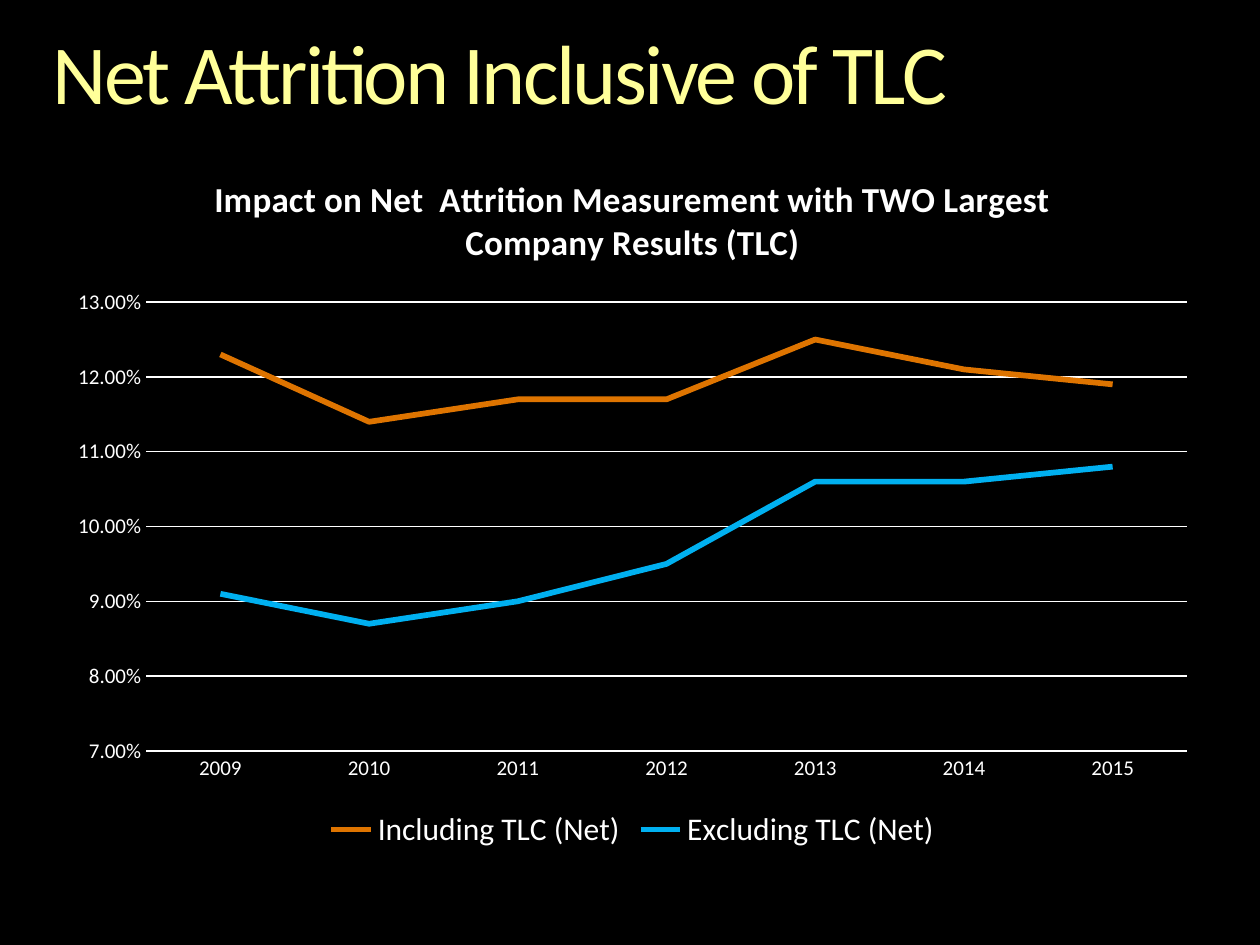
"""Build the net attrition slide with its two-series line chart."""
from dataclasses import dataclass

import pptx
import pptx.chart.data
import pptx.dml.color
import pptx.enum.chart
import pptx.enum.text
import pptx.util

Pt = pptx.util.Pt
FONT = "Calibri"
WHITE = "FFFFFF"


@dataclass
class AttritionSeries:
    name: str
    color: str
    rates: tuple[float, ...]


YEARS = [str(year) for year in range(2009, 2016)]
ATTRITION = [
    AttritionSeries("Including TLC (Net)", "DE7400",
                    (0.123, 0.114, 0.117, 0.117, 0.125, 0.121, 0.119)),
    AttritionSeries("Excluding TLC (Net)", "00B0F0",
                    (0.091, 0.087, 0.09, 0.095, 0.106, 0.106, 0.108)),
]


def rgb(color: str) -> pptx.dml.color.RGBColor:
    return pptx.dml.color.RGBColor.from_string(color)


def style_font(font, size: float, color: str = WHITE, bold: bool = False) -> None:
    font.name = FONT
    font.size = Pt(size)
    font.bold = bold
    font.color.rgb = rgb(color)


def style_line(line, color: str, width: float) -> None:
    line.color.rgb = rgb(color)
    line.width = Pt(width)


def add_heading(slide) -> None:
    heading = slide.shapes.title
    heading.left, heading.top, heading.width, heading.height = Pt(30), Pt(18), Pt(660), Pt(52.5)
    frame = heading.text_frame
    frame.text = "Net Attrition Inclusive of TLC"
    frame.margin_left = frame.margin_right = frame.margin_top = frame.margin_bottom = 0
    frame.word_wrap = True
    frame.vertical_anchor = pptx.enum.text.MSO_ANCHOR.TOP
    frame.auto_size = pptx.enum.text.MSO_AUTO_SIZE.SHAPE_TO_FIT_TEXT
    paragraph = frame.paragraphs[0]
    paragraph.alignment = pptx.enum.text.PP_ALIGN.LEFT
    paragraph.line_spacing = 0.9
    run = paragraph.runs[0]
    style_font(run.font, 48, "FFFF99")
    run._r.get_or_add_rPr().set("spc", "-150")


def style_axes(chart) -> None:
    for axis in (chart.category_axis, chart.value_axis):
        axis.major_tick_mark = axis.minor_tick_mark = pptx.enum.chart.XL_TICK_MARK.NONE
        style_font(axis.tick_labels.font, 12)
    style_line(chart.category_axis.format.line, WHITE, 0.75)
    rate_axis = chart.value_axis
    rate_axis.minimum_scale, rate_axis.maximum_scale, rate_axis.major_unit = 0.07, 0.13, 0.01
    rate_axis.tick_labels.number_format = "0.00%"
    rate_axis.tick_labels.number_format_is_linked = False
    rate_axis.format.line.fill.background()
    style_line(rate_axis.major_gridlines.format.line, WHITE, 0.75)


def add_attrition_chart(slide) -> None:
    rates = pptx.chart.data.CategoryChartData(number_format="0.00%")
    rates.categories = YEARS
    for series in ATTRITION:
        rates.add_series(series.name, series.rates)
    chart = slide.shapes.add_chart(pptx.enum.chart.XL_CHART_TYPE.LINE,
                                   Pt(31.5), Pt(84), Pt(660), Pt(404.6), rates).chart
    style_font(chart.font, 10)
    chart.has_title = True
    caption = chart.chart_title.text_frame
    caption.text = "Impact on Net  Attrition Measurement with TWO Largest Company Results (TLC)"
    style_font(caption.paragraphs[0].runs[0].font, 20, bold=True)
    chart.chart_title.include_in_layout = False
    style_axes(chart)
    chart.has_legend = True
    chart.legend.position = pptx.enum.chart.XL_LEGEND_POSITION.BOTTOM
    chart.legend.include_in_layout = False
    style_font(chart.legend.font, 18)
    chart.plots[0].vary_by_categories = False
    for trend, series in zip(chart.plots[0].series, ATTRITION):
        trend.smooth = False
        style_line(trend.format.line, series.color, 3.25)


def main() -> None:
    deck = pptx.Presentation()
    deck.slide_width, deck.slide_height = Pt(720), Pt(540)
    slide = deck.slides.add_slide(deck.slide_layouts.get_by_name("Title Only"))
    slide.background.fill.solid()
    slide.background.fill.fore_color.rgb = rgb("000000")
    add_heading(slide)
    add_attrition_chart(slide)
    deck.save("out.pptx")


if __name__ == "__main__":
    main()
